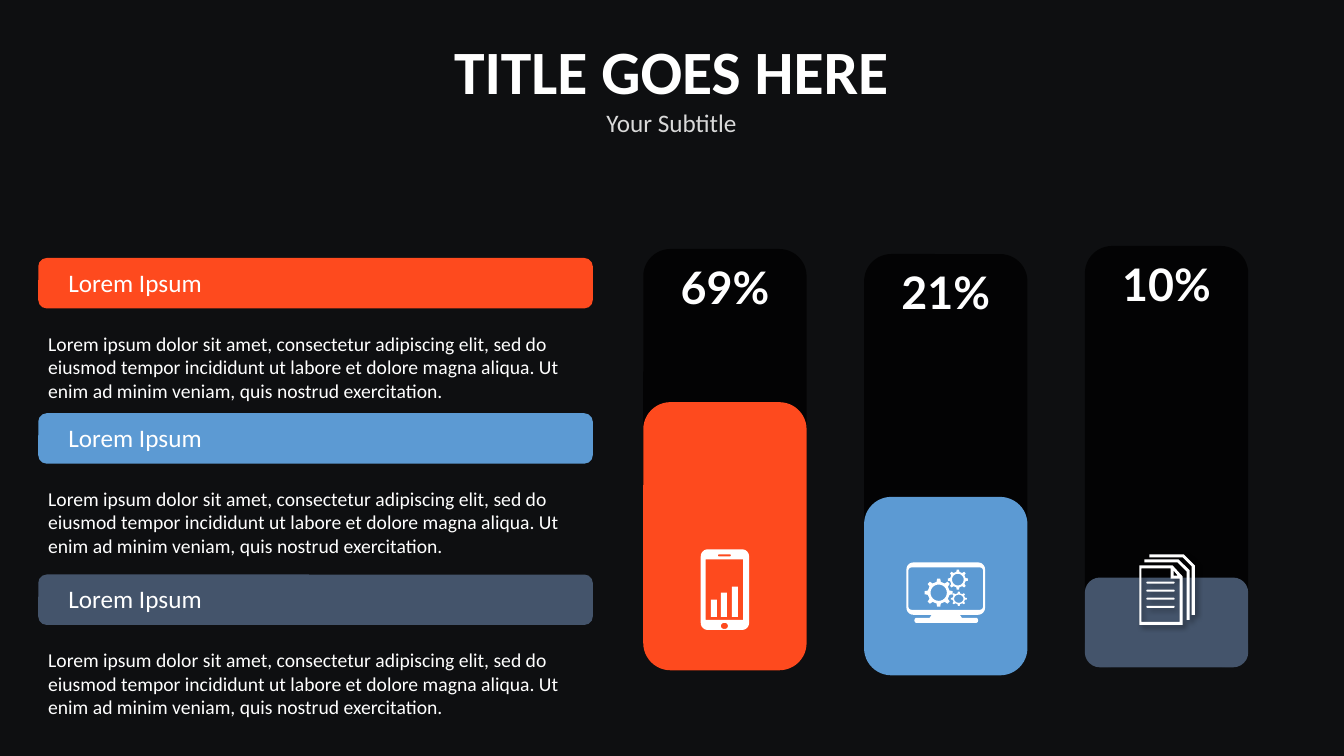
from math import cos, pi, sin

from lxml import etree
from pptx import Presentation
from pptx.dml.color import RGBColor
from pptx.enum.shapes import MSO_SHAPE as Shape
from pptx.enum.text import PP_ALIGN as Align
from pptx.oxml.ns import qn
from pptx.util import Inches, Pt

BACKGROUND = RGBColor(0x0E, 0x0F, 0x11)
BLACK = RGBColor(0x00, 0x00, 0x00)
WHITE = RGBColor(0xFF, 0xFF, 0xFF)
GREY = RGBColor(0xD9, 0xD9, 0xD9)
ORANGE = RGBColor(0xFE, 0x4A, 0x1E)
BLUE = RGBColor(0x5C, 0x9A, 0xD3)
SLATE = RGBColor(0x44, 0x54, 0x6B)

TITLE, SUBTITLE = "TITLE GOES HERE", "Your Subtitle"
HEADING = "Lorem Ipsum"
BODY = (
    "Lorem ipsum dolor sit amet, consectetur adipiscing elit, sed do eiusmod "
    "tempor incididunt ut labore et dolore magna aliqua. Ut enim ad minim "
    "veniam, quis nostrud exercitation."
)
SECTIONS = [(2.56, ORANGE), (4.1, BLUE), (5.7, SLATE)]  # heading top, colour
BARS = [  # label, track top, filled height, colour
    ("69%", 2.47, 2.66, ORANGE),
    ("21%", 2.52, 1.77, BLUE),
    ("10%", 2.44, 0.89, SLATE),
]
SECTION_LEFT, SECTION_WIDTH = 0.38, 5.5
BAR_LEFT, BAR_STEP, BAR_WIDTH, TRACK_HEIGHT = 6.38, 2.19, 1.62, 4.18


def add_box(shapes, kind, left, top, width, height, color, alpha=None):
    shape = shapes.add_shape(
        kind, Inches(left), Inches(top), Inches(width), Inches(height))
    shape.shadow.inherit = False
    shape.fill.solid()
    shape.fill.fore_color.rgb = color
    shape.line.fill.background()
    if alpha is not None:
        fill_color = shape.fill._xPr.find(".//" + qn("a:srgbClr"))
        etree.SubElement(fill_color, qn("a:alpha"), val=str(alpha * 1000))


def add_text(shapes, left, top, width, height, lines, align=Align.LEFT):
    """Each line is (text, size, font, color, bold)."""
    box = shapes.add_textbox(
        Inches(left), Inches(top), Inches(width), Inches(height))
    frame = box.text_frame
    frame.word_wrap = True
    for index, (text, size, font, color, bold) in enumerate(lines):
        paragraph = frame.add_paragraph() if index else frame.paragraphs[0]
        paragraph.alignment = align
        run = paragraph.add_run()
        run.text = text
        run.font.size = Pt(size)
        run.font.name = font
        run.font.bold = bold
        run.font.color.rgb = color


def rounded(left, top, width, height, radius, steps=6):
    """Points of a rectangle with rounded corners."""
    right, bottom = left + width - radius, top + height - radius
    left, top = left + radius, top + radius
    corners = [(right, bottom), (left, bottom), (left, top), (right, top)]
    points = []
    for quarter, (x, y) in enumerate(corners):
        for step in range(steps + 1):
            angle = (quarter + step / steps) * pi / 2
            points.append((x + radius * cos(angle), y + radius * sin(angle)))
    return points


def gear(x, y, radius_x, radius_y, teeth=8):
    """Toothed outline followed by its round hole."""
    outline = []
    for tooth in range(teeth):
        for turn, scale in ((-0.25, 0.78), (-0.14, 1), (0.14, 1), (0.25, 0.78)):
            angle = (tooth + turn) * 2 * pi / teeth
            outline.append((x + scale * radius_x * cos(angle),
                            y + scale * radius_y * sin(angle)))
    hole = [(x + 0.58 * radius_x * cos(step * pi / 12),
             y + 0.58 * radius_y * sin(step * pi / 12)) for step in range(24)]
    return [outline, hole]


def add_outline(shapes, contours):
    """White freeform; contours inside others become holes."""
    contours = [[(Inches(x), Inches(y)) for x, y in points]
                for points in contours]
    builder = shapes.build_freeform(*contours[0][0])
    for index, (start, *others) in enumerate(contours):
        if index:
            builder.move_to(*start)
        builder.add_line_segments(others, close=True)
    shape = builder.convert_to_shape()
    shape.shadow.inherit = False
    shape.fill.solid()
    shape.fill.fore_color.rgb = WHITE
    shape.line.fill.background()
    return shape


def add_phone(slide):
    shapes = slide.shapes.add_group_shape().shapes
    add_outline(shapes, [
        rounded(6.95, 5.45, 0.48, 0.8, 0.07),
        rounded(7.12, 5.5, 0.13, 0.02, 0.01),
        rounded(7.15, 6.18, 0.07, 0.06, 0.03),
        [(7, 5.55), (7.37, 5.55), (7.37, 6.15), (7, 6.15)],
    ])
    for left, height in ((7.05, 0.17), (7.15, 0.24), (7.26, 0.3)):
        add_box(shapes, Shape.RECTANGLE, left, 6.12 - height, 0.06, height, WHITE)


def add_monitor(slide):
    shapes = slide.shapes.add_group_shape().shapes
    add_outline(shapes, [
        rounded(8.99, 5.58, 0.78, 0.52, 0.07),
        rounded(9.01, 5.63, 0.74, 0.42, 0.03),
        [(9.24, 6.1), (9.52, 6.1), (9.54, 6.13), (9.22, 6.13)],
        rounded(9.07, 6.13, 0.63, 0.05, 0.02),
    ])
    for size in ((9.31, 5.88, 0.14, 0.14), (9.51, 5.94, 0.08, 0.07),
                 (9.5, 5.75, 0.1, 0.1)):
        add_outline(shapes, gear(*size))


def add_documents(slide):
    sheet = [(11.3, 5.61), (11.63, 5.61), (11.73, 5.72), (11.73, 6.2), (11.3, 6.2)]
    inside = [(11.32, 5.64), (11.61, 5.64), (11.61, 5.74), (11.7, 5.74),
              (11.7, 6.17), (11.32, 6.17)]
    fold = [(11.64, 5.66), (11.68, 5.71), (11.64, 5.71)]
    edge = [(11.35, 5.55), (11.69, 5.55), (11.8, 5.66), (11.8, 6.15),
            (11.77, 6.15), (11.77, 5.67), (11.68, 5.58), (11.35, 5.58)]
    back_edge = [(x + 0.05, y - 0.05) for x, y in edge]
    lines = [rounded(11.37, 5.77 + 0.08 * row, 0.28, 0.02, 0.01)
             for row in range(4)]
    shape = add_outline(
        slide.shapes, [sheet, inside, fold, edge, back_edge, *lines])
    effects = shape._element.spPr.find(qn("a:effectLst"))
    shadow = etree.SubElement(
        effects, qn("a:outerShdw"), blurRad=str(Pt(4)), dist=str(Pt(3)),
        dir=str(45 * 60000), algn="tl", rotWithShape="0")
    color = etree.SubElement(shadow, qn("a:srgbClr"), val=str(BLACK))
    etree.SubElement(color, qn("a:alpha"), val="40000")


def main():
    presentation = Presentation()
    presentation.slide_width = Inches(13.33)
    presentation.slide_height = Inches(7.5)
    slide = presentation.slides.add_slide(presentation.slide_layouts[6])
    slide.background.fill.solid()
    slide.background.fill.fore_color.rgb = BACKGROUND

    add_text(slide.shapes, 3.65, 0.28, 6.02, 1.14, [
        (TITLE, 44, "Calibri", WHITE, True),
        (SUBTITLE, 18, "Calibri", GREY, False),
    ], Align.CENTER)

    for top, color in SECTIONS:
        heading = slide.shapes.add_group_shape().shapes
        add_box(heading, Shape.ROUNDED_RECTANGLE,
                SECTION_LEFT, top, SECTION_WIDTH, 0.5, color)
        add_text(heading, SECTION_LEFT + 0.2, top + 0.04, 2.9, 0.4,
                 [(HEADING, 18, "Calibri", WHITE, False)])
        add_text(slide.shapes, SECTION_LEFT, top + 0.68, SECTION_WIDTH, 0.81,
                 [(BODY, 14, "Calibri", WHITE, False)])

    for index, (label, top, filled, color) in enumerate(BARS):
        left = BAR_LEFT + index * BAR_STEP
        add_box(slide.shapes, Shape.ROUNDED_RECTANGLE,
                left, top, BAR_WIDTH, TRACK_HEIGHT, BLACK, alpha=75)
        add_box(slide.shapes, Shape.ROUNDED_RECTANGLE,
                left, top + TRACK_HEIGHT - filled, BAR_WIDTH, filled, color)
        add_text(slide.shapes, left, top + 0.06, BAR_WIDTH, 0.64,
                 [(label, 32, "Lato", WHITE, True)], Align.CENTER)

    add_phone(slide)
    add_monitor(slide)
    add_documents(slide)
    presentation.save("out.pptx")


if __name__ == "__main__":
    main()
